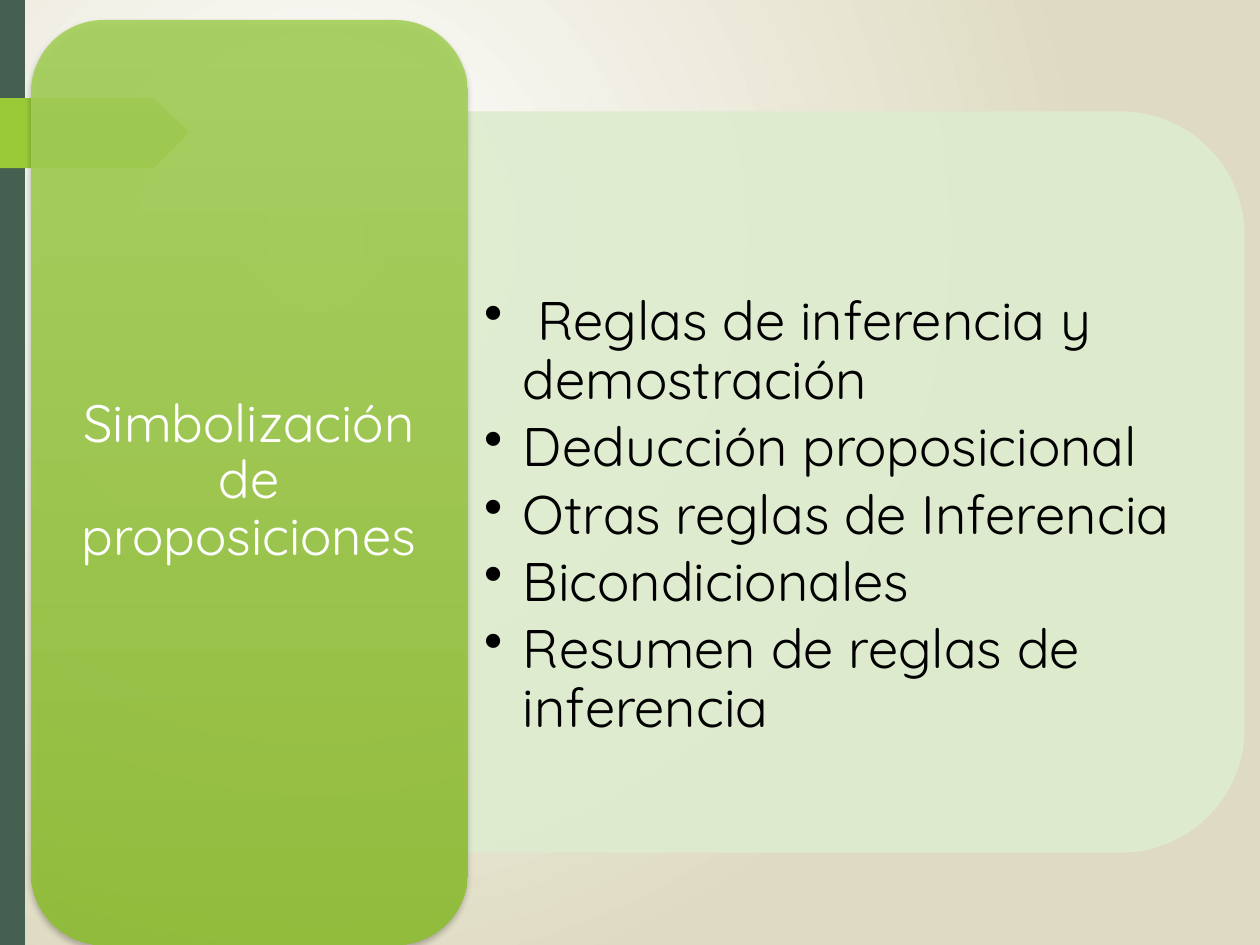
from dataclasses import dataclass

from lxml.etree import SubElement
from pptx import Presentation
from pptx.dml.color import RGBColor
from pptx.enum.shapes import MSO_SHAPE
from pptx.enum.text import MSO_ANCHOR, PP_ALIGN
from pptx.oxml.ns import qn
from pptx.util import Pt

PX = 914400 / 126


def px(length):
    """Turn px into EMU."""
    return round(length * PX)


@dataclass(frozen=True)
class Theme:
    """Colours, font and type sizes of the slide."""

    glow: str = "FFFFFF"
    sand: str = "DFDBC2"
    rail: str = "455F51"
    tab: str = "99CB38"
    panel: str = "DEECCE"
    card_top: str = "A4D059"
    card_bottom: str = "8FBE33"
    shadow: str = "000000"
    ink: str = "000000"
    title_ink: str = "FFFFFF"
    font: str = "Quicksand"
    title_size: int = 30
    list_size: int = 31


class SlideBuilder:
    """Draw each kind of element on the current slide in one theme."""

    def __init__(self, slide, theme):
        """Keep the slide and its theme."""
        self.slide = slide
        self.theme = theme

    def gradient(self, fill, colors):
        """Give a fill a two-stop gradient."""
        fill.gradient()
        for stop, color in zip(fill.gradient_stops, colors):
            stop.color.rgb = RGBColor.from_string(color)

    def background(self, colors):
        """Lay a circular gradient behind the slide."""
        self.gradient(self.slide.background.fill, colors)
        linear = next(self.slide.element.iter(qn("a:lin")))
        gradient = linear.getparent()
        gradient.remove(linear)
        circle = SubElement(gradient, qn("a:path"), path="circle")
        SubElement(circle, qn("a:fillToRect"), l="50000", t="50000", r="100000", b="100000")

    def paint(self, shape, color, line=None):
        """Apply a flat colour or a gradient pair, and an optional outline."""
        shape.shadow.inherit = False
        if isinstance(color, tuple):
            self.gradient(shape.fill, color)
            shape.fill.gradient_angle = 270
        else:
            shape.fill.solid()
            shape.fill.fore_color.rgb = RGBColor.from_string(color)
        if line:
            shape.line.color.rgb = RGBColor.from_string(line)
            shape.line.width = Pt(0.75)
        else:
            shape.line.fill.background()

    def shape(self, kind, bounds, color, line=None, rotation=0, opacity=100):
        """Add a preset shape."""
        shape = self.slide.shapes.add_shape(kind, *map(px, bounds))
        shape.rotation = rotation
        self.paint(shape, color, line)
        if opacity < 100:
            for tint in shape.element.spPr.iter(qn("a:srgbClr")):
                SubElement(tint, qn("a:alpha"), val=str(opacity * 1000))
        return shape

    def outline(self, points, color):
        """Add a closed polygon."""
        builder = self.slide.shapes.build_freeform(*points[0], scale=PX)
        builder.add_line_segments(points[1:])
        self.paint(builder.convert_to_shape(), color)

    def drop_shadow(self, shape):
        """Cast a soft shadow downwards."""
        effects = shape.element.spPr.find(qn("a:effectLst"))
        shadow = SubElement(effects, qn("a:outerShdw"), blurRad=str(Pt(3)), dist=str(Pt(2)),
                            dir="5400000", rotWithShape="0")
        color = SubElement(shadow, qn("a:srgbClr"), val=self.theme.shadow)
        SubElement(color, qn("a:alpha"), val="25000")

    def text(self, bounds, lines, size, color, margin, align=PP_ALIGN.LEFT, bullet_indent=0):
        """Add a middle-anchored text box, bulleted when it has an indent."""
        frame = self.slide.shapes.add_textbox(*map(px, bounds)).text_frame
        frame_format = {
            "word_wrap": True, "vertical_anchor": MSO_ANCHOR.MIDDLE,
            "margin_left": px(margin), "margin_right": px(margin),
            "margin_top": px(8), "margin_bottom": px(8),
        }
        for name, value in frame_format.items():
            setattr(frame, name, value)
        for index, line in enumerate(lines):
            para = frame.paragraphs[0] if index == 0 else frame.add_paragraph()
            para_format = {"alignment": align, "line_spacing": 0.9, "space_after": Pt(5)}
            for name, value in para_format.items():
                setattr(para, name, value)
            if bullet_indent:
                properties = para._p.get_or_add_pPr()
                properties.set("marL", str(px(bullet_indent)))
                properties.set("indent", str(-px(bullet_indent)))
                SubElement(properties, qn("a:buChar"), char="•")
            span = para.add_run()
            span.text = line
            span_format = {"name": self.theme.font, "size": Pt(size)}
            for name, value in span_format.items():
                setattr(span.font, name, value)
            span.font.color.rgb = RGBColor.from_string(color)


def main():
    """Build the slide and save it."""
    theme = Theme()
    deck = Presentation()
    deck.slide_width, deck.slide_height = px(1260), px(945)
    page = SlideBuilder(deck.slides.add_slide(deck.slide_layouts[6]), theme)

    page.background((theme.glow, theme.sand))
    page.shape(MSO_SHAPE.RECTANGLE, (0, 0, 25, 945), theme.rail)
    page.outline([(0, 98), (152, 98), (156, 100), (188, 131), (188, 134),
                  (156, 166), (152, 168), (0, 168)], theme.tab)

    page.shape(MSO_SHAPE.ROUND_2_SAME_RECTANGLE, (486, 94, 740, 776), theme.panel,
               line=theme.panel, rotation=90, opacity=90)
    topics = [
        " Reglas de inferencia y demostración",
        "Deducción proposicional",
        "Otras reglas de Inferencia",
        "Bicondicionales",
        "Resumen de reglas de inferencia",
    ]
    page.text((468, 216, 740, 601), topics, theme.list_size, theme.ink, 16, bullet_indent=39)

    card = page.shape(MSO_SHAPE.ROUNDED_RECTANGLE, (31, 20, 437, 925),
                      (theme.card_top, theme.card_bottom), opacity=90)
    page.drop_shadow(card)
    page.text((52, 41, 394, 882), ["Simbolización de proposiciones"], theme.title_size,
              theme.title_ink, 15, align=PP_ALIGN.CENTER)

    deck.save("out.pptx")


if __name__ == "__main__":
    main()
